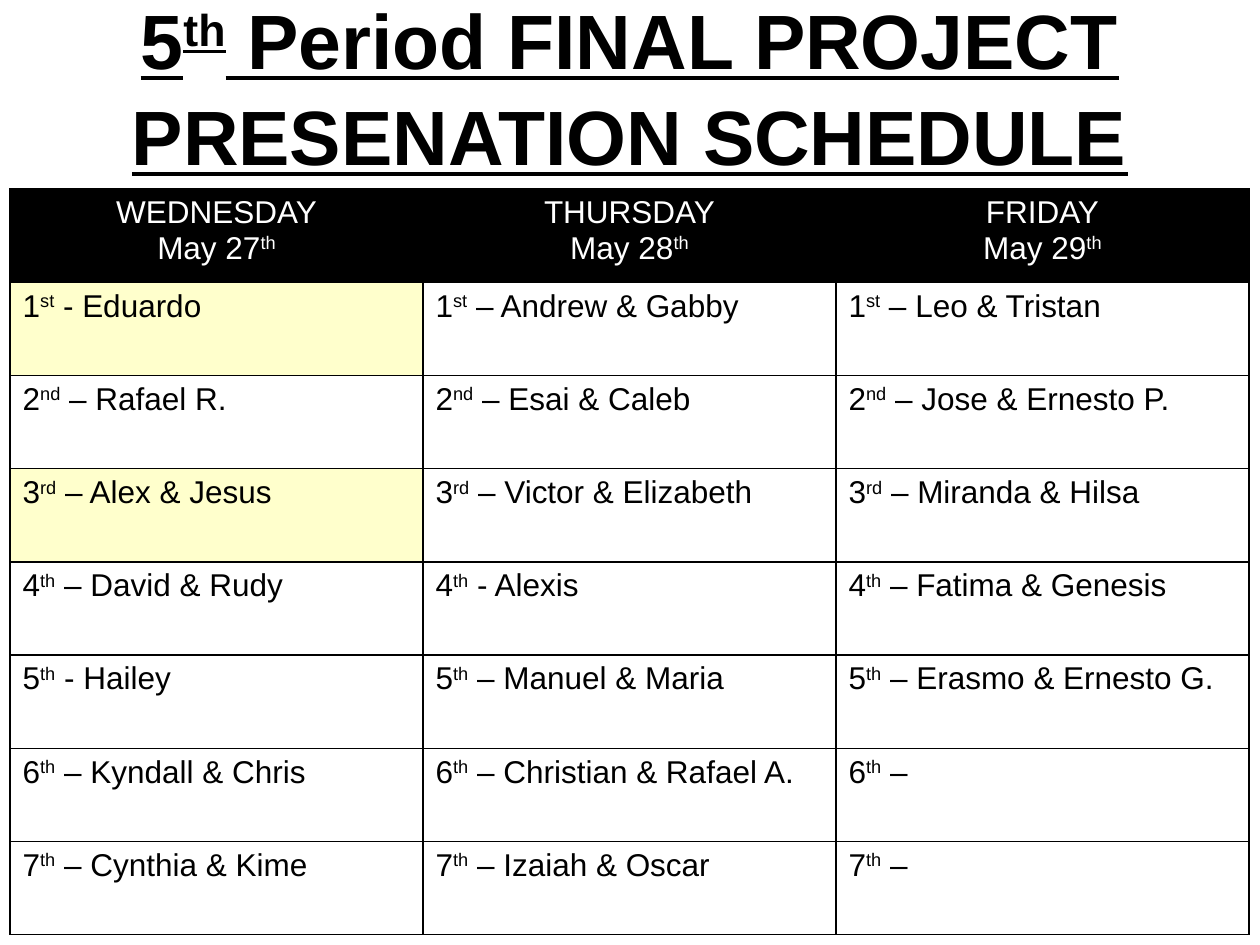
"""Build a class schedule slide with a title and a three-day table."""
from dataclasses import dataclass

import lxml.etree
import pptx
import pptx.dml.color
import pptx.enum.text
import pptx.oxml.ns
import pptx.util

ALIGN = pptx.enum.text.PP_ALIGN


@dataclass(frozen=True)
class Theme:
    font: str = "Arial"
    black: str = "000000"
    white: str = "FFFFFF"
    highlight: str = "FFFFCC"
    title_size: int = 44
    table_size: int = 18
    border: int = 1
    title_gap: int = 2


@dataclass(frozen=True)
class Span:
    text: str
    raised: bool = False


@dataclass(frozen=True)
class Style:
    size: int
    color: str
    strong: bool = False


@dataclass(frozen=True)
class Day:
    name: str
    date: str
    presenters: tuple[str, ...]
    highlighted: tuple[int, ...] = ()


THEME = Theme()
SUFFIXES = ("st", "nd", "rd", "th", "th", "th", "th")
DAYS = (
    Day("WEDNESDAY", "May 27",
        ("- Eduardo", "– Rafael R.", "– Alex & Jesus", "– David & Rudy",
         "- Hailey", "– Kyndall & Chris", "– Cynthia & Kime"), (1, 3)),
    Day("THURSDAY", "May 28",
        ("– Andrew & Gabby", "– Esai & Caleb", "– Victor & Elizabeth", "- Alexis",
         "– Manuel & Maria", "– Christian & Rafael A.", "– Izaiah & Oscar")),
    Day("FRIDAY", "May 29",
        ("– Leo & Tristan", "– Jose & Ernesto P.", "– Miranda & Hilsa",
         "– Fatima & Genesis", "– Erasmo & Ernesto G.", "–", "–")),
)


def px(length: int) -> int:
    return round(length * 914400 / 126)


def rgb(color: str) -> pptx.dml.color.RGBColor:
    return pptx.dml.color.RGBColor.from_string(color)


def write_spans(para, spans: list[Span], style: Style, align=ALIGN.LEFT) -> None:
    para.alignment = align
    for span in spans:
        run = para.add_run()
        run.text = span.text
        run.font.name = THEME.font
        run.font.size = pptx.util.Pt(style.size)
        run.font.color.rgb = rgb(style.color)
        run.font.bold = style.strong
        run.font.underline = style.strong
        if span.raised:
            run.font._element.set("baseline", "30000")


def add_borders(cell) -> None:
    properties = cell._tc.get_or_add_tcPr()
    for index, side in enumerate(("lnL", "lnR", "lnT", "lnB")):
        line = lxml.etree.Element(pptx.oxml.ns.qn(f"a:{side}"),
                                  w=str(pptx.util.Pt(THEME.border)))
        fill = lxml.etree.SubElement(line, pptx.oxml.ns.qn("a:solidFill"))
        lxml.etree.SubElement(fill, pptx.oxml.ns.qn("a:srgbClr"), val=THEME.black)
        properties.insert(index, line)


def fill_cell(cell, color: str | None) -> None:
    if color:
        cell.fill.solid()
        cell.fill.fore_color.rgb = rgb(color)
    else:
        cell.fill.background()
    add_borders(cell)


def add_title(page) -> None:
    box = page.shapes.add_textbox(px(0), px(38), px(1260), px(88))
    frame = box.text_frame
    frame.word_wrap = True
    frame.vertical_anchor = pptx.enum.text.MSO_ANCHOR.MIDDLE
    frame.margin_top, frame.margin_bottom = px(16), px(6)
    style = Style(THEME.title_size, THEME.black, strong=True)
    write_spans(frame.paragraphs[0],
                [Span("5"), Span("th", True), Span(" Period FINAL PROJECT")],
                style, ALIGN.CENTER)
    para = frame.add_paragraph()
    para.space_before = pptx.util.Pt(THEME.title_gap)
    write_spans(para, [Span("PRESENATION SCHEDULE")], style, ALIGN.CENTER)


def fill_day(table, column: int, day: Day) -> None:
    heading = Style(THEME.table_size, THEME.white)
    body = Style(THEME.table_size, THEME.black)
    header = table.cell(0, column)
    fill_cell(header, THEME.black)
    frame = header.text_frame
    write_spans(frame.paragraphs[0], [Span(day.name)], heading, ALIGN.CENTER)
    write_spans(frame.add_paragraph(), [Span(day.date), Span("th", True)],
                heading, ALIGN.CENTER)
    for place, (suffix, presenter) in enumerate(zip(SUFFIXES, day.presenters), 1):
        cell = table.cell(place, column)
        fill_cell(cell, THEME.highlight if place in day.highlighted else None)
        write_spans(cell.text_frame.paragraphs[0],
                    [Span(str(place)), Span(suffix, True), Span(f" {presenter}")], body)


def add_schedule(page) -> None:
    table = page.shapes.add_table(len(SUFFIXES) + 1, len(DAYS), px(10), px(189),
                                  px(1239), px(746)).table
    table.first_row = False
    table.horz_banding = False
    for column, day in enumerate(DAYS):
        fill_day(table, column, day)


def main() -> None:
    deck = pptx.Presentation()
    deck.slide_width, deck.slide_height = px(1260), px(945)
    page = deck.slides.add_slide(deck.slide_layouts[6])
    add_title(page)
    add_schedule(page)
    deck.save("out.pptx")


if __name__ == "__main__":
    main()
